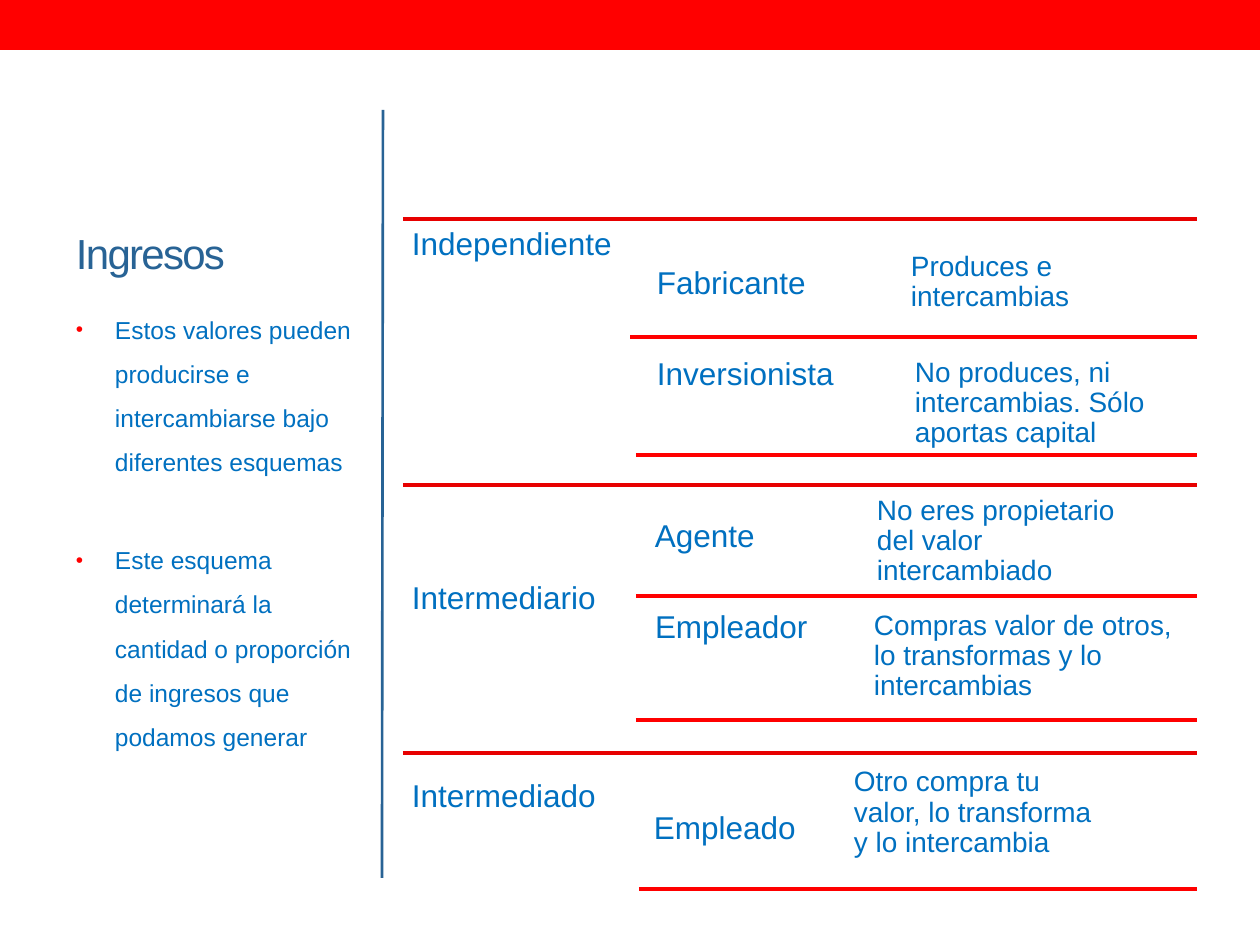
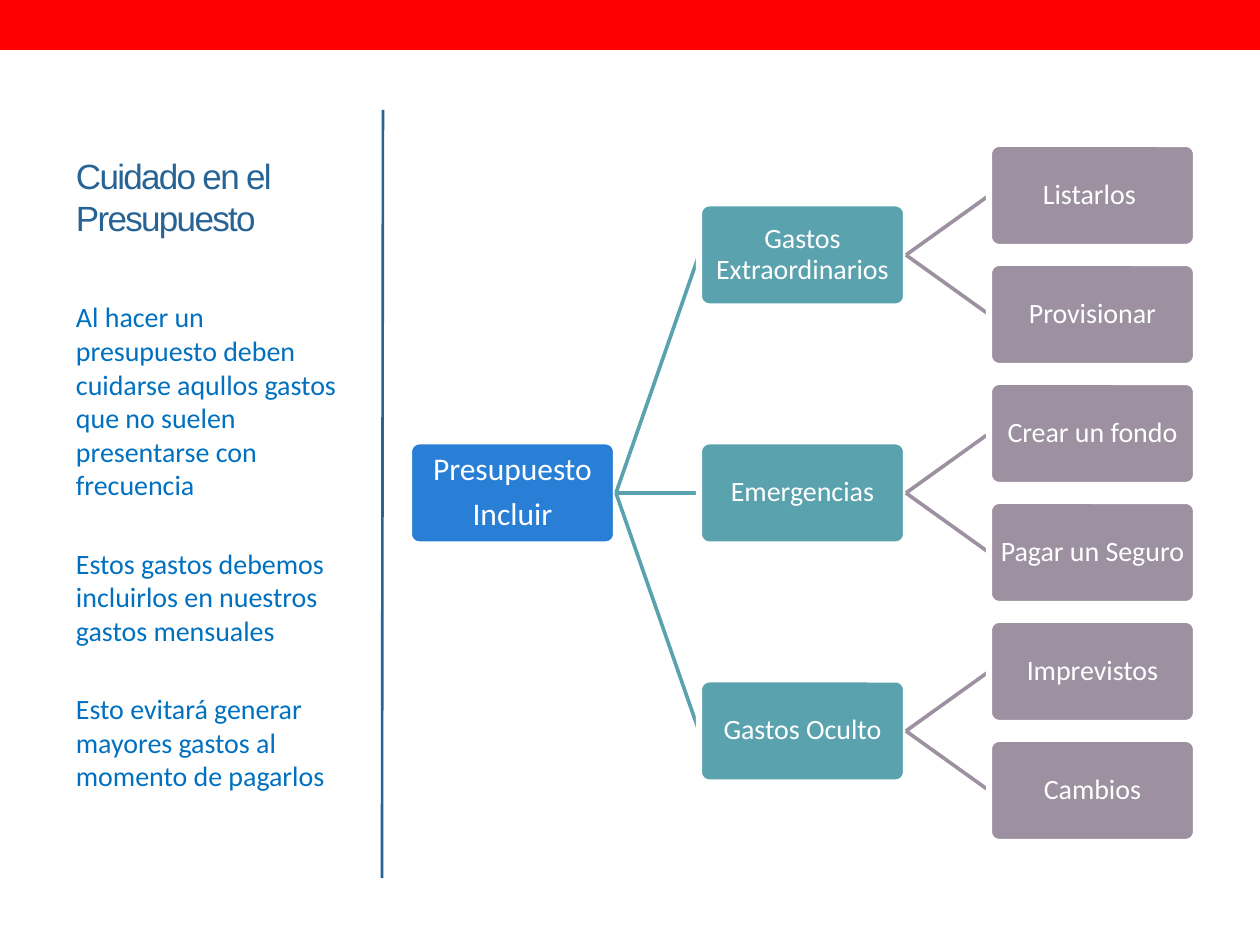
"""Build two slides on income schemes and budget care."""
import pptx
import pptx.util
import pptx.dml.color
import pptx.enum.shapes
import pptx.enum.text
import pptx.oxml
import pptx.oxml.ns
from lxml import etree

RGB = pptx.dml.color.RGBColor
RED = RGB(0xFF, 0x00, 0x00)
DARK_RED = RGB(0xE7, 0x00, 0x00)
NAVY = RGB(0x28, 0x63, 0x95)
BLUE = RGB(0x00, 0x70, 0xC0)
WHITE = RGB(0xFF, 0xFF, 0xFF)
ROOT = RGB(0x29, 0x7F, 0xD5)
TEAL = RGB(0x5A, 0xA2, 0xAE)
MAUVE = RGB(0x9D, 0x90, 0xA0)

SHAPE = pptx.enum.shapes.MSO_SHAPE
TOP = pptx.enum.text.MSO_ANCHOR.TOP
MIDDLE = pptx.enum.text.MSO_ANCHOR.MIDDLE
BOTTOM = pptx.enum.text.MSO_ANCHOR.BOTTOM
LEFT = pptx.enum.text.PP_ALIGN.LEFT
CENTER = pptx.enum.text.PP_ALIGN.CENTER
PX = 914400 / 126

INCOME_TITLE = "Ingresos"
INCOME_POINTS = [
    "Estos valores pueden producirse e intercambiarse bajo diferentes esquemas",
    "Este esquema determinará la cantidad o proporción de ingresos que podamos generar",
]
SCHEMES = [
    ("Independiente", (403, 219, 234, 253), TOP),
    ("Intermediario", (403, 473, 232, 253), MIDDLE),
    ("Intermediado", (403, 771, 236, 131), TOP),
]
ROLES = [
    ("Fabricante", (648, 226, 220, 117), MIDDLE),
    ("Inversionista", (648, 349, 249, 117), TOP),
    ("Agente", (646, 479, 212, 117), MIDDLE),
    ("Empleador", (646, 602, 209, 117), TOP),
    ("Empleado", (645, 756, 186, 146), MIDDLE),
]
MEANINGS = [
    ("Produces e intercambias", (902, 224, 246, 117), MIDDLE),
    ("No produces, ni intercambias. Sólo aportas capital", (906, 349, 290, 117), TOP),
    ("No eres propietario del valor intercambiado", (868, 479, 270, 117), BOTTOM),
    ("Compras valor de otros, lo transformas y lo intercambias", (865, 602, 319, 117), TOP),
    ("Otro compra tu valor, lo transforma y lo intercambia", (845, 738, 271, 150), MIDDLE),
]
SCHEME_RULES = [(403, 219), (403, 485), (403, 753)]
ROLE_RULES = [(630, 337), (636, 455), (636, 596), (636, 720), (639, 889)]
RULE_END = 1197

BUDGET_TITLE = "Cuidado en el Presupuesto"
BUDGET_POINTS = [
    "Al hacer un presupuesto deben cuidarse aqullos gastos que no suelen presentarse con frecuencia",
    "Estos gastos debemos incluirlos en nuestros gastos mensuales",
    "Esto evitará generar mayores gastos al momento de pagarlos",
]
BUDGET = ["Presupuesto", "Incluir"]
EXPENSES = [
    ("Gastos Extraordinarios", ["Listarlos ", "Provisionar"]),
    ("Emergencias", ["Crear un fondo", "Pagar un Seguro"]),
    ("Gastos Oculto", ["Imprevistos", "Cambios"]),
]
TREE_X, TREE_Y, STEP_X, STEP_Y, BOX_W, BOX_H = 409, 144, 290, 119, 207, 103


def px(*lengths):
    return [round(n * PX) for n in lengths]


def set_all(target, values):
    for name, value in values.items():
        setattr(target, name, value)


def write(sp, lines, size, color, font="Arial", anchor=TOP, align=LEFT,
          inset=(13, 6), spacing=1.0, before=0, gap=0, after=0, track=0):
    tf = sp.text_frame
    side, end = px(*inset)
    set_all(tf, dict(word_wrap=True, vertical_anchor=anchor, margin_left=side,
                     margin_right=side, margin_top=end, margin_bottom=end))
    for i, line in enumerate(lines):
        p = tf.add_paragraph() if i else tf.paragraphs[0]
        set_all(p, dict(alignment=align, line_spacing=spacing,
                        space_before=pptx.util.Pt(gap if i else before),
                        space_after=pptx.util.Pt(after)))
        r = p.add_run()
        r.text = line
        set_all(r.font, dict(name=font, size=pptx.util.Pt(size)))
        r.font.color.rgb = color
        if track:
            r._r.get_or_add_rPr().set("spc", str(track))


def add_text(s, box, lines, size, color, **style):
    sp = s.shapes.add_textbox(*px(*box))
    write(sp, lines, size, color, **style)
    return sp


def add_line(s, start, end, color, width=2.08):
    line = s.shapes.add_connector(
        pptx.enum.shapes.MSO_CONNECTOR.STRAIGHT, *px(*start, *end))
    line.line.color.rgb = color
    line.line.width = pptx.util.Pt(width)
    etree.SubElement(line._element.spPr, pptx.oxml.ns.qn("a:effectLst"))
    return line


def add_bullets(sp):
    indent = px(39)[0]
    for p in sp.text_frame.paragraphs:
        pPr = p._p.get_or_add_pPr()
        pPr.set("marL", str(indent))
        pPr.set("indent", str(-indent))
        for xml in (f'buClr {{}}><a:srgbClr val="{RED}"/></a:buClr>',
                    'buSzPct {} val="85000"/>',
                    'buFont {} typeface="Arial"/>',
                    'buChar {} char="•"/>'):
            ns = pptx.oxml.ns.nsdecls("a")
            pPr.append(pptx.oxml.parse_xml("<a:" + xml.format(ns)))


def add_base(prs, title, size, anchor):
    s = prs.slides.add_slide(prs.slide_layouts[6])
    band = s.shapes.add_shape(SHAPE.RECTANGLE, *px(0, 0, 1260, 50))
    band.shadow.inherit = False
    band.fill.solid()
    band.fill.fore_color.rgb = RED
    band.line.fill.background()
    add_line(s, (383, 110), (382, 878), NAVY, 1.5)
    add_text(s, (63, 110, 295, 174), [title], size, NAVY, anchor=anchor, track=-100)
    return s


def add_income(prs):
    s = add_base(prs, INCOME_TITLE, 24, BOTTOM)
    for rules, color in ((SCHEME_RULES, DARK_RED), (ROLE_RULES, RED)):
        for x, y in rules:
            add_line(s, (x, y), (RULE_END, y), color)
    for cells, size in ((SCHEMES, 18), (ROLES, 18), (MEANINGS, 16)):
        for label, box, anchor in cells:
            add_text(s, box, [label], size, BLUE, anchor=anchor, inset=(9, 9),
                     spacing=0.9, after=size * 0.35)
    points = add_text(s, (63, 294, 314, 585), INCOME_POINTS, 14, BLUE,
                      spacing=1.5, before=3, gap=31)
    add_bullets(points)


def add_node(s, level, row, lines, color, size=16, parent=None):
    sp = s.shapes.add_shape(SHAPE.ROUNDED_RECTANGLE, *px(
        TREE_X + level * STEP_X, TREE_Y + row * STEP_Y, BOX_W, BOX_H))
    sp.adjustments[0] = 0.1
    sp.shadow.inherit = False
    sp.fill.solid()
    sp.fill.fore_color.rgb = color
    sp.line.color.rgb = WHITE
    sp.line.width = pptx.util.Pt(3.5)
    write(sp, lines, size, WHITE, font="Calibri", anchor=MIDDLE, align=CENTER,
          inset=(4, 4), spacing=0.9, after=size * 0.35)
    if parent is not None:
        branch = add_line(s, (0, 0), (0, 0), color)
        branch.begin_connect(parent, 3)
        branch.end_connect(sp, 1)
        sp._element.addprevious(branch._element)
    return sp


def add_budget(prs):
    s = add_base(prs, BUDGET_TITLE, 20, MIDDLE)
    root = add_node(s, 0, 2.5, BUDGET, ROOT, size=18)
    for i, (expense, actions) in enumerate(EXPENSES):
        node = add_node(s, 1, 2 * i + 0.5, [expense], TEAL, parent=root)
        for j, action in enumerate(actions):
            add_node(s, 2, 2 * i + j, [action], MAUVE, parent=node)
    add_text(s, (63, 294, 295, 585), BUDGET_POINTS, 16, BLUE, font="Calibri",
             before=3, gap=25.5)


def main():
    prs = pptx.Presentation()
    prs.slide_width, prs.slide_height = px(1260, 945)
    add_income(prs)
    add_budget(prs)
    prs.save("out.pptx")


if __name__ == "__main__":
    main()
